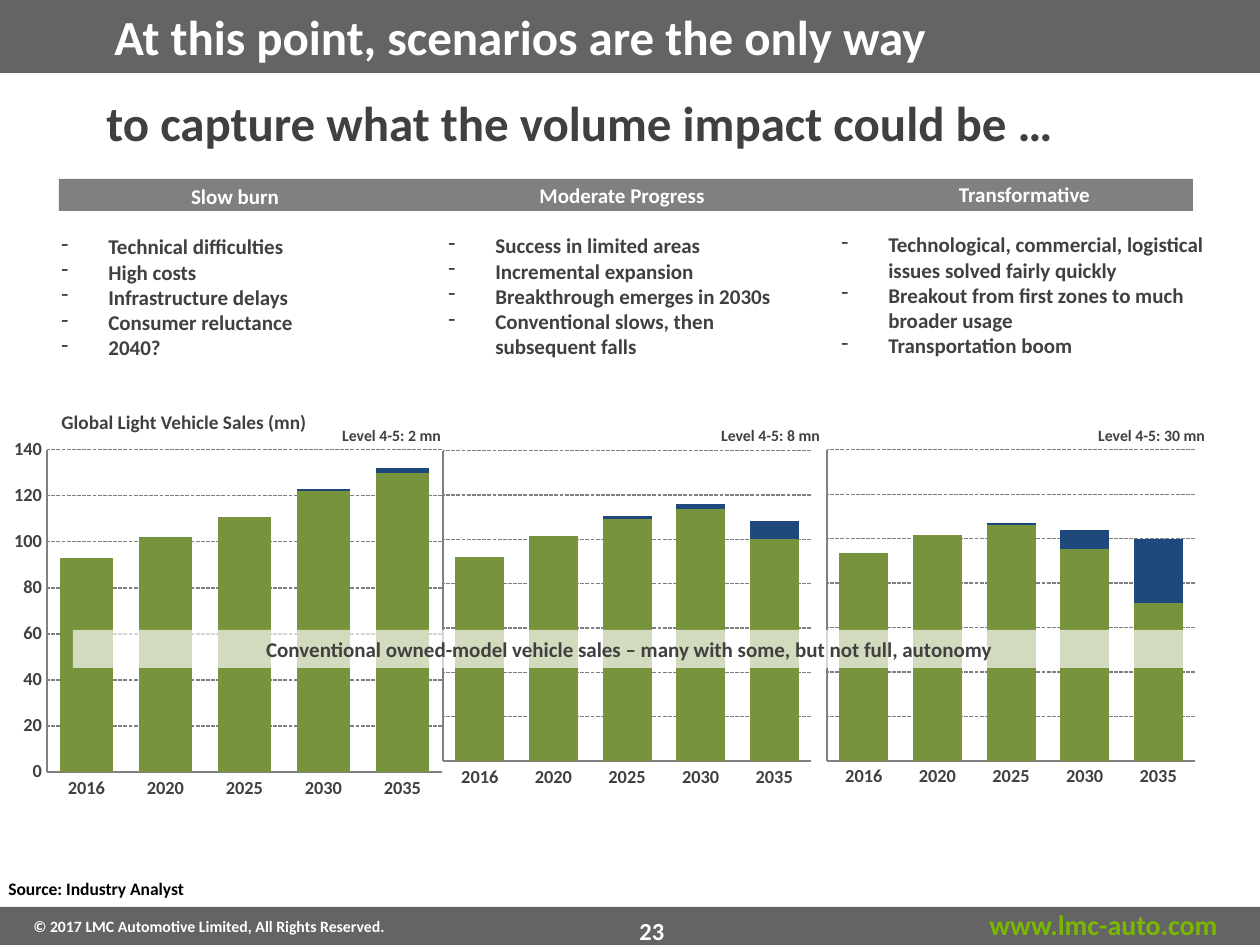
from lxml import etree
from pptx import Presentation
from pptx.chart.data import CategoryChartData
from pptx.dml.color import RGBColor
from pptx.enum.chart import XL_CHART_TYPE, XL_TICK_LABEL_POSITION, XL_TICK_MARK
from pptx.enum.dml import MSO_LINE
from pptx.enum.shapes import MSO_SHAPE
from pptx.enum.text import MSO_ANCHOR, PP_ALIGN
from pptx.oxml import parse_xml
from pptx.oxml.ns import qn
from pptx.util import Pt

PX = 7257  # EMU per px, 126 px to the inch
FONT = "Calibri"
COLORS = {name: RGBColor.from_string(value) for name, value in {
    "bar": "646464", "strip": "808080", "text": "404040", "white": "FFFFFF",
    "black": "000000", "link": "7AB800", "conventional": "77933C", "autonomous": "1F497D",
}.items()}
CHART_NS = "http://schemas.openxmlformats.org/drawingml/2006/chart"

deck = Presentation()
deck.slide_width, deck.slide_height = 1260 * PX, 945 * PX
page = deck.slides.add_slide(deck.slide_layouts[6])


def add_rect(left, top, width, height, color):
    rect = page.shapes.add_shape(MSO_SHAPE.RECTANGLE, left * PX, top * PX, width * PX, height * PX)
    rect.shadow.inherit = False
    rect.fill.solid()
    rect.fill.fore_color.rgb = COLORS[color]
    rect.line.fill.background()
    return rect


def add_text(left, top, width, height, lines, size, color="text", align=PP_ALIGN.LEFT):
    """Add a bold text box; the lines after the first are dashed bullets."""
    box = page.shapes.add_textbox(left * PX, top * PX, width * PX, height * PX)
    frame = box.text_frame
    frame.word_wrap = True
    for number, line in enumerate(lines):
        paragraph = frame.add_paragraph() if number else frame.paragraphs[0]
        paragraph.text = line
        paragraph.alignment = PP_ALIGN.LEFT if number else align
        if number == 1:
            paragraph.space_before = Pt(14.6)
        if number:
            properties = paragraph._p.get_or_add_pPr()
            properties.set("marL", str(47 * PX))
            properties.set("indent", str(-47 * PX))
            etree.SubElement(properties, qn("a:buChar")).set("char", "-")
        font = paragraph.font
        font.name, font.size, font.bold = FONT, Pt(size), True
        font.color.rgb = COLORS["text" if number else color]


# Header and footer
add_rect(0, 0, 1260, 73, "bar")
add_rect(0, 907, 1260, 38, "bar")
add_text(960, 901, 287, 47, ["www.lmc-auto.com"], 16, "link", PP_ALIGN.CENTER)
add_text(21, 911, 452, 32, ["© 2017 LMC Automotive Limited, All Rights Reserved."], 9, "white")
add_text(426, 910, 452, 42, ["23"], 14, "white", PP_ALIGN.CENTER)
add_text(102, 0, 1040, 72, ["At this point, scenarios are the only way"], 28, "white")
add_text(94, 86, 1040, 72, ["to capture what the volume impact could be …"], 28)

# Scenario descriptions
add_rect(59, 179, 1134, 32, "strip")
scenarios = [
    (49, 177, 372, ["Slow burn", "Technical difficulties", "High costs",
                    "Infrastructure delays", "Consumer reluctance", "2040?"]),
    (436, 176, 372, ["Moderate Progress", "Success in limited areas", "Incremental expansion",
                     "Breakthrough emerges in 2030s",
                     "Conventional slows, then subsequent falls"]),
    (829, 175, 391, ["Transformative",
                     "Technological, commercial, logistical issues solved fairly quickly",
                     "Breakout from first zones to much broader usage",
                     "Transportation boom"]),
]
for left, top, width, lines in scenarios:
    add_text(left, top, width, 190, lines, 12, "white", PP_ALIGN.CENTER)

# Charts: frame in px, inner plot area as fractions of it, axis maximum, values
wide_plot, narrow_plot = (0.094, 0.05, 0.886, 0.855), (0.045, 0.063, 0.911, 0.79)
charts = [
    ((5, 431, 446, 377), wide_plot, 140, (93, 102, 111, 122, 130), (0, 0, 0, 1, 2)),
    ((425, 426, 404, 393), narrow_plot, 123, (81, 89, 96, 100, 88), (0, 0, 1, 2, 7)),
    ((809, 425, 404, 394), narrow_plot, 132, (88, 96, 100, 90, 67), (0, 0, 1, 8, 27)),
]
for frame, plot_area, maximum, conventional, autonomous in charts:
    data = CategoryChartData()
    data.categories = ["2016", "2020", "2025", "2030", "2035"]
    data.add_series("Series 1", conventional)
    data.add_series("Series 2", autonomous)
    chart = page.shapes.add_chart(
        XL_CHART_TYPE.COLUMN_STACKED, *(length * PX for length in frame), data).chart
    chart.has_title = chart.has_legend = False
    chart.font.name, chart.font.size, chart.font.bold = FONT, Pt(10.5), True
    chart.font.color.rgb = COLORS["text"]

    plot = chart.plots[0]
    plot.gap_width, plot.overlap, plot.vary_by_categories = 50, 100, False
    for series, color in zip(plot.series, ("conventional", "autonomous")):
        series.format.fill.solid()
        series.format.fill.fore_color.rgb = COLORS[color]

    values = chart.value_axis
    for axis in (chart.category_axis, values):
        axis.major_tick_mark = axis.minor_tick_mark = XL_TICK_MARK.NONE
        axis.format.line.color.rgb = COLORS["strip"]
        axis.format.line.width = Pt(0.75)
    values.minimum_scale, values.maximum_scale, values.major_unit = 0, maximum, maximum / 7
    if plot_area is narrow_plot:
        values.tick_label_position = XL_TICK_LABEL_POSITION.NONE
    grid = values.major_gridlines.format.line
    grid.color.rgb, grid.width = COLORS["strip"], Pt(0.75)
    grid.dash_style = MSO_LINE.SQUARE_DOT

    area = chart._chartSpace.chart.plotArea
    for old_layout in area.findall(qn("c:layout")):
        area.remove(old_layout)
    sizes = "".join(f'<c:{tag} val="{value}"/>' for tag, value in zip("xywh", plot_area))
    area.insert(0, parse_xml(
        f'<c:layout xmlns:c="{CHART_NS}"><c:manualLayout><c:layoutTarget val="inner"/>'
        f'<c:xMode val="edge"/><c:yMode val="edge"/>{sizes}</c:manualLayout></c:layout>'))

# Chart labels
add_text(49, 404, 280, 37, ["Global Light Vehicle Sales (mn)"], 11)
for left, volume in ((314, 2), (693, 8), (1074, 30)):
    add_text(left, 420, 155, 32, [f"Level 4-5: {volume} mn"], 9, align=PP_ALIGN.CENTER)
add_text(-4, 872, 450, 34, ["Source: Industry Analyst"], 10, "black")

# Translucent band across the charts
band = add_rect(73, 630, 1113, 38, "white")
white = band.fill._xPr.find(".//" + qn("a:srgbClr"))
etree.SubElement(white, qn("a:alpha")).set("val", "67000")
band.text_frame.vertical_anchor = MSO_ANCHOR.MIDDLE
caption = band.text_frame.paragraphs[0]
caption.text = "Conventional owned-model vehicle sales – many with some, but not full, autonomy"
caption.alignment = PP_ALIGN.CENTER
caption.font.name, caption.font.size, caption.font.bold = FONT, Pt(12), True
caption.font.color.rgb = COLORS["text"]

deck.save("out.pptx")
